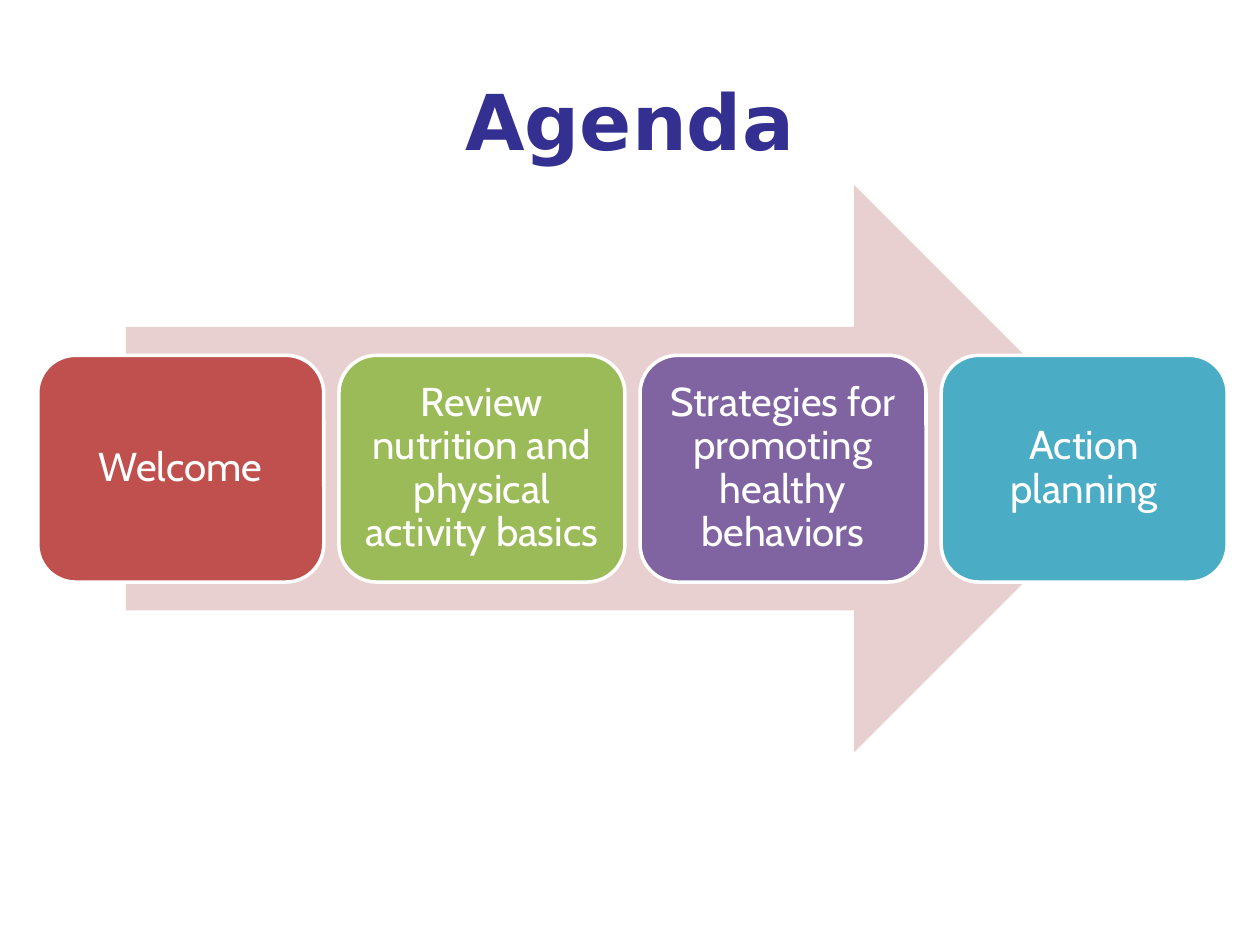
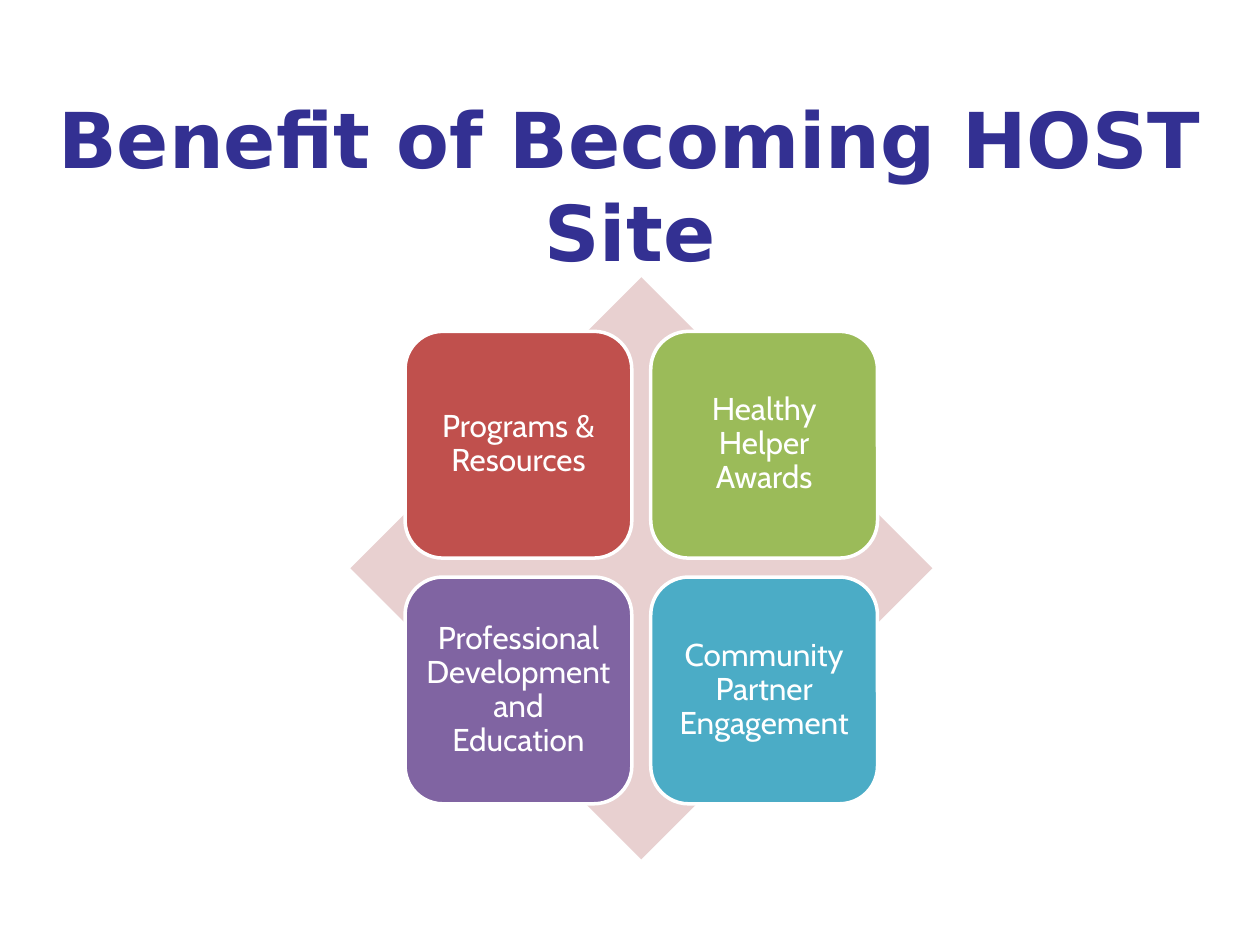
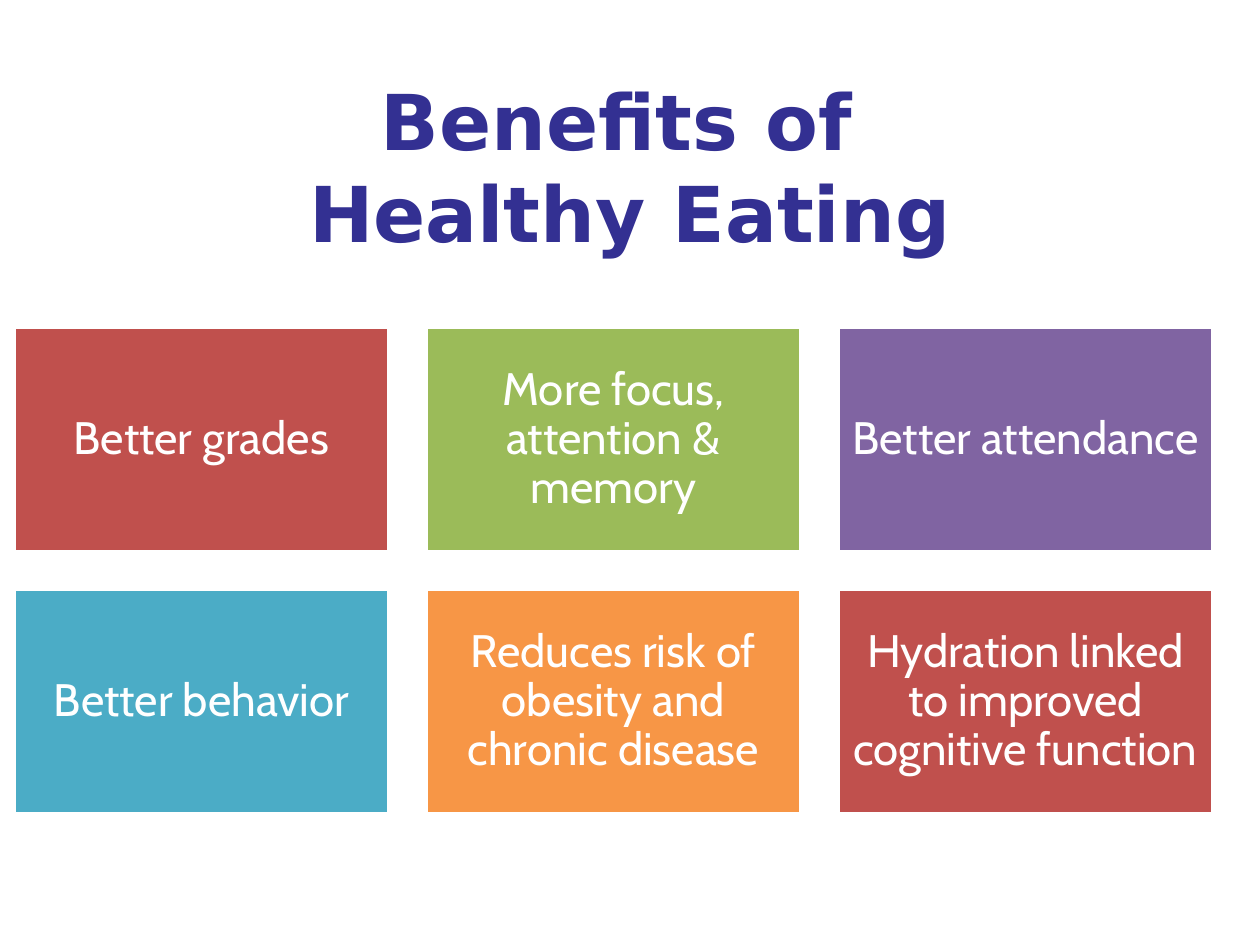
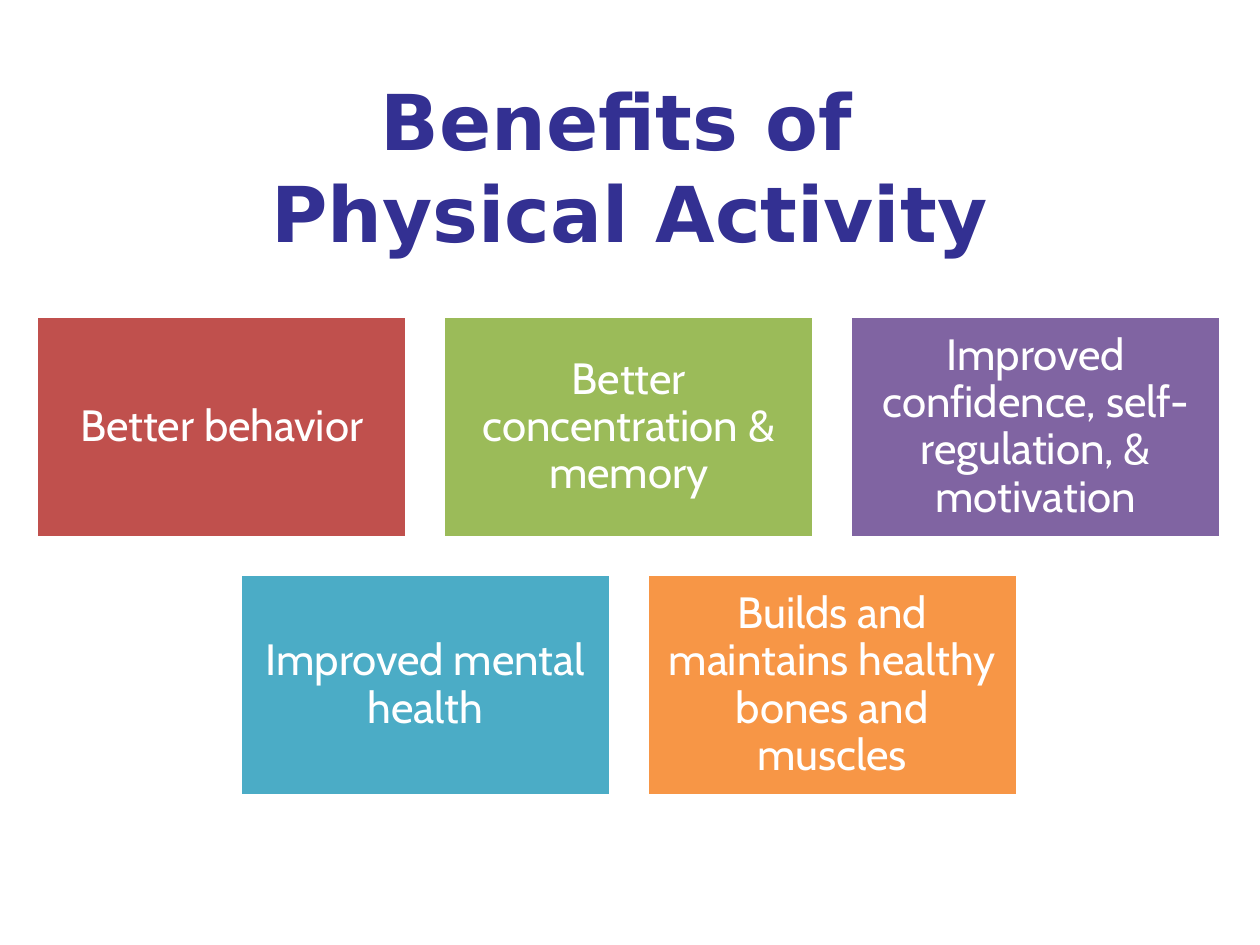
from itertools import cycle

from pptx import Presentation
from pptx.dml.color import RGBColor
from pptx.enum.shapes import MSO_SHAPE
from pptx.enum.text import MSO_ANCHOR, MSO_AUTO_SIZE, PP_ALIGN
from pptx.util import Inches, Pt

TITLE_FONT = "DejaVu Sans"
BODY_FONT = "Cabin"
TITLE_COLOR = "333092"
WHITE = "FFFFFF"
BACKDROP_COLOR = "E8D0D0"
CARD_COLORS = ["C0504D", "9BBB59", "8064A2", "4BACC6", "F79646"]
TITLE_ONLY_LAYOUT = 5


def color(hex_string):
    return RGBColor.from_string(hex_string)


class Deck:
    """Holds the shared style and the slide being built."""

    def __init__(self):
        self.presentation = Presentation()
        self.presentation.slide_width = Inches(10)
        self.presentation.slide_height = Inches(7.5)
        self.slide = None

    def add_slide(self, title, left=0.5, top=0.53, width=9, height=1.03):
        layout = self.presentation.slide_layouts[TITLE_ONLY_LAYOUT]
        self.slide = self.presentation.slides.add_slide(layout)
        shape = self.slide.shapes.title
        shape.left, shape.top = Inches(left), Inches(top)
        shape.width, shape.height = Inches(width), Inches(height)
        self.set_text(shape, title, TITLE_FONT, 44, TITLE_COLOR, bold=True)
        shape.text_frame.vertical_anchor = MSO_ANCHOR.TOP

    def set_text(self, shape, text, font_name, size, hex_string, bold=False):
        """Set centred text; a vertical tab in it is a line break."""
        frame = shape.text_frame
        frame.text = text
        frame.word_wrap = True
        frame.auto_size = MSO_AUTO_SIZE.NONE
        paragraph = frame.paragraphs[0]
        paragraph.alignment = PP_ALIGN.CENTER
        for run in paragraph.runs:
            run.font.name = font_name
            run.font.size = Pt(size)
            run.font.bold = bold
            run.font.color.rgb = color(hex_string)

    def add_filled_shape(self, kind, left, top, width, height, fill):
        shape = self.slide.shapes.add_shape(
            kind, Inches(left), Inches(top), Inches(width), Inches(height))
        shape.shadow.inherit = False
        shape.fill.solid()
        shape.fill.fore_color.rgb = color(fill)
        shape.line.fill.background()
        return shape

    def add_card(self, kind, left, top, width, height, fill, text, size, inset):
        card = self.add_filled_shape(kind, left, top, width, height, fill)
        card.line.color.rgb = color(WHITE)
        card.line.width = Pt(2)
        self.set_text(card, text, BODY_FONT, size, WHITE)
        frame = card.text_frame
        frame.vertical_anchor = MSO_ANCHOR.MIDDLE
        frame.margin_left = frame.margin_right = Inches(inset)
        frame.margin_top = frame.margin_bottom = Inches(inset)
        frame.paragraphs[0].line_spacing = 0.9

    def add_card_rows(self, rows, kind, center, top, width, height, gap, size, inset=0.1):
        """Lay out rows of cards, each row centred on the same vertical axis."""
        fills = cycle(CARD_COLORS)
        for row_index, row in enumerate(rows):
            row_width = len(row) * (width + gap) - gap
            row_left = center - row_width / 2
            row_top = top + row_index * (height + gap)
            for column, text in enumerate(row):
                left = row_left + column * (width + gap)
                self.add_card(kind, left, row_top, width, height,
                              next(fills), text, size, inset)


def build_agenda(deck):
    deck.add_slide("Agenda")
    deck.add_filled_shape(MSO_SHAPE.RIGHT_ARROW, 1, 1.47, 8.03, 4.5, BACKDROP_COLOR)
    steps = [
        "Welcome",
        "Review nutrition and physical activity basics",
        "Strategies for promoting healthy behaviors",
        "Action planning",
    ]
    deck.add_card_rows([steps], MSO_SHAPE.ROUNDED_RECTANGLE, center=5.02, top=2.82,
                       width=2.27, height=1.8, gap=0.12, size=23)


def build_host_site(deck):
    deck.add_slide("Benefit of Becoming HOST Site", 0.28, 0.68, 9.44, 1.58)
    deck.add_filled_shape(MSO_SHAPE.DIAMOND, 2.78, 2.2, 4.62, 4.62, BACKDROP_COLOR)
    benefits = [
        ["Programs & Resources", "Healthy Helper Awards"],
        ["Professional Development and Education", "Community Partner Engagement"],
    ]
    deck.add_card_rows(benefits, MSO_SHAPE.ROUNDED_RECTANGLE, center=5.09, top=2.63,
                       width=1.8, height=1.8, gap=0.15, size=18, inset=0.07)


def build_healthy_eating(deck):
    deck.add_slide("Benefits of \vHealthy Eating")
    benefits = [
        ["Better grades", "More focus, attention & memory", "Better attendance"],
        ["Better behavior", "Reduces risk of obesity and chronic disease",
         "Hydration linked to improved cognitive function"],
    ]
    deck.add_card_rows(benefits, MSO_SHAPE.RECTANGLE, center=4.87, top=2.6,
                       width=2.97, height=1.78, gap=0.3, size=26)


def build_physical_activity(deck):
    deck.add_slide("Benefits of \vPhysical Activity")
    benefits = [
        ["Better behavior", "Better concentration & memory",
         "Improved confidence, self-regulation, & motivation"],
        ["Improved mental health", "Builds and maintains healthy bones and muscles"],
    ]
    deck.add_card_rows(benefits, MSO_SHAPE.RECTANGLE, center=4.99, top=2.51,
                       width=2.94, height=1.76, gap=0.29, size=25)


def main():
    deck = Deck()
    build_agenda(deck)
    build_host_site(deck)
    build_healthy_eating(deck)
    build_physical_activity(deck)
    deck.presentation.save("out.pptx")


if __name__ == "__main__":
    main()
